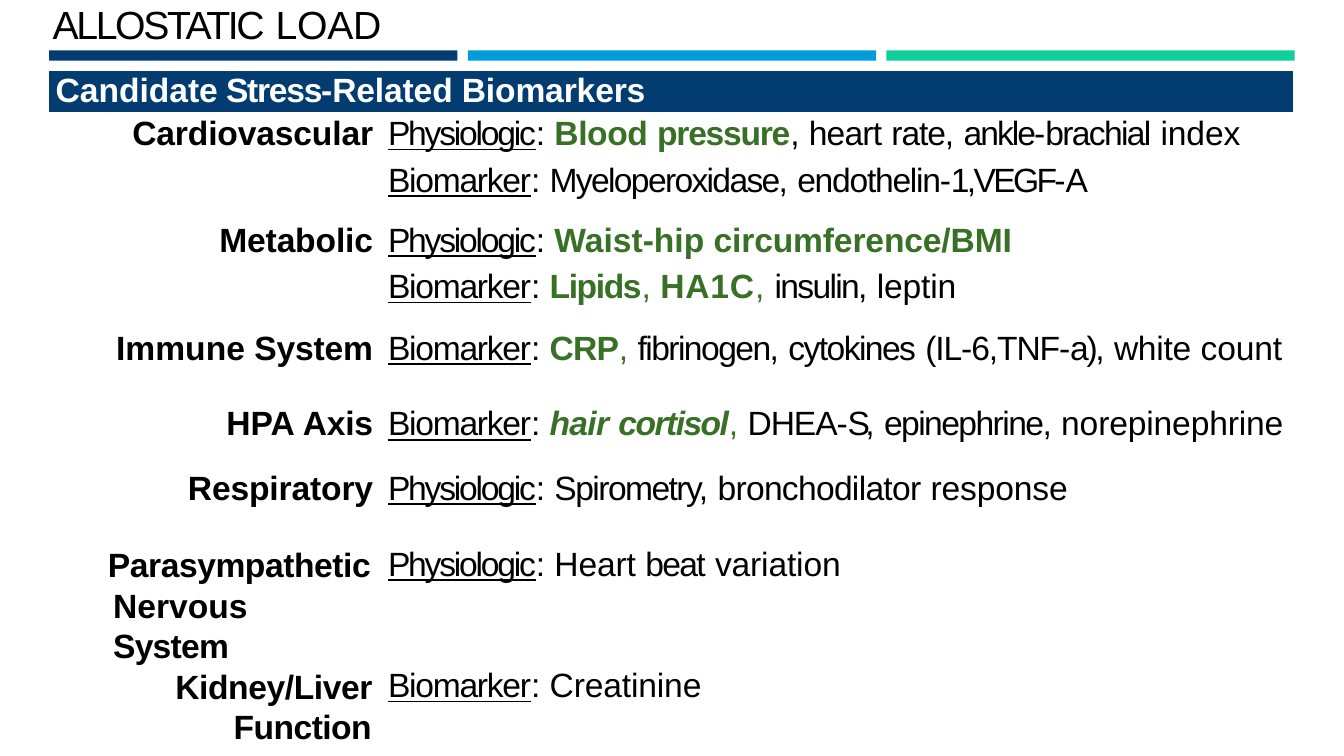
from dataclasses import dataclass

from lxml.etree import SubElement
from pptx import Presentation
from pptx.dml.color import RGBColor as Rgb
from pptx.enum.shapes import MSO_SHAPE as Shape
from pptx.enum.text import PP_ALIGN as Align
from pptx.oxml.ns import qn
from pptx.util import Cm, Pt


@dataclass(frozen=True)
class Theme:
    """Colours, font and type sizes of the slide."""
    navy: str = "033C71"
    blue: str = "009DD9"
    mint: str = "10CF9B"
    green: str = "387026"
    black: str = "000000"
    white: str = "FFFFFF"
    font: str = "Arial"
    title_size: float = 28
    body_size: float = 24


THEME = Theme()

PHYSIOLOGIC = [("Physiologic", -1.6, "u"), (": ", -1.6, "")]
BIOMARKER = [("Biomarker", -0.9, "u"), (": ", -0.9, "")]

TITLE = [("ALLOSTATIC ", -1.7, ""), ("LOAD", -0.2, "")]
HEADING = [("Candidate", 0, "bw"), (" Stress-", -0.9, "bw"), ("Related Biomarkers", -0.1, "bw")]

SYSTEMS = [
    ([("Cardiovascular", -0.1, "b")],
     [PHYSIOLOGIC + [("Blood ", -0.3, "bg"), ("pressure", -0.9, "bg"), (", ", -0.9, ""),
                     ("heart ", -0.6, ""), ("rate, ", -0.8, ""), ("ankle-", -1.4, ""),
                     ("brachial ", -1.2, ""), ("index", -0.1, "")],
      BIOMARKER + [("Myeloperoxidase, ", -1.2, ""), ("endothelin-", -0.9, ""),
                   ("1,VEGF-", -1.9, ""), ("A", -0.5, "")]]),
    ([("Metabolic", -0.1, "b")],
     [PHYSIOLOGIC + [("Waist-hip ", 0, "bg"), ("circumference/BMI", -0.1, "bg")],
      BIOMARKER + [("Lipids", -1, "bg"), (", ", -1, "g"), ("HA1C", 0.6, "bg"), (", ", 0.6, "g"),
                   ("insulin, ", -1.2, ""), ("leptin", -0.1, "")]]),
    ([("Immune ", 0, "b"), ("System", -0.1, "b")],
     [BIOMARKER + [("CRP", -0.6, "bg"), (", ", -0.6, "g"), ("fibrinogen, ", -1.1, ""),
                   ("cytokines ", -1.1, ""), ("(IL-6,TNF-", -0.8, ""), ("a), ", -1.7, ""),
                   ("white ", -0.2, ""), ("count", -0.1, "")]]),
    ([("HPA ", 0, "b"), ("Axis", -0.2, "b")],
     [BIOMARKER + [("hair ", -0.5, "big"), ("cortisol", -1.1, "big"), (", ", -1.1, "g"),
                   ("DHEA-", -0.8, ""), ("S, ", -3.4, ""), ("epinephrine, ", -1.1, ""),
                   ("norepinephrine", -0.1, "")]]),
    ([("Respiratory", -0.1, "b")],
     [PHYSIOLOGIC + [("Spirometry, ", -1.1, ""), ("bronchodilator ", -0.5, ""),
                     ("response", -0.1, "")]]),
    ([("Parasympathetic ", -0.3, "b"), ("Nervous ", 0, "b"), ("System", -0.5, "b")],
     [PHYSIOLOGIC + [("Heart ", -0.1, ""), ("beat ", -1.2, ""), ("variation", -0.1, "")]]),
    ([("Kidney/Liver ", -0.3, "b"), ("Function", -0.4, "b")],
     [BIOMARKER + [("Creatinine", -0.1, "")]]),
]

COLUMN_WIDTHS = [8.36, 23.01]
ROW_HEIGHTS = [1.09, 2.69, 2.72, 1.9, 1.63, 1.9, 2.41, 2.62]
LINE = 27.9
HANGING_LABELS = {5: (1.63, -0.13, 0.23, 29), 6: (4.67, -1.47, 0, 28.8)}


def write_runs(paragraph, runs, size):
    """Add styled runs (b bold, i italic, u underline, g green, w white), end spaces untracked."""
    for text, tracking, style in runs:
        word = text.rstrip()
        for part, spacing in ((word, tracking), (text[len(word):], 0)):
            if not part:
                continue
            run = paragraph.add_run()
            run.text = part
            font = run.font
            font.name, font.size = THEME.font, Pt(size)
            font.bold, font.italic, font.underline = ("b" in style, "i" in style, "u" in style)
            colour = THEME.green if "g" in style else THEME.white if "w" in style else THEME.black
            font.color.rgb = Rgb.from_string(colour)
            run._r.get_or_add_rPr().set("spc", str(round(spacing * 100)))


def indent(paragraph, left, first=0):
    """Set the left margin and first-line indent in centimetres."""
    properties = paragraph._p.get_or_add_pPr()
    properties.set("marL", str(Cm(left)))
    properties.set("indent", str(Cm(first)))


def style_cell(cell, row):
    """Clear the insets, draw white borders and fill the heading row."""
    cell.margin_left = cell.margin_right = cell.margin_top = cell.margin_bottom = 0
    properties = cell._tc.get_or_add_tcPr()
    heavy_side = {0: "lnB", 1: "lnT"}.get(row)
    for side in ("lnL", "lnR", "lnT", "lnB"):
        border = SubElement(properties, qn(f"a:{side}"), w=str(Pt(3 if side == heavy_side else 1)))
        SubElement(SubElement(border, qn("a:solidFill")), qn("a:srgbClr"), val=THEME.white)
    if row == 0:
        cell.fill.solid()
        cell.fill.fore_color.rgb = Rgb.from_string(THEME.navy)
    else:
        cell.fill.background()


def add_title(slide):
    """Place the title and the three bars below it."""
    frame = slide.shapes.add_textbox(Cm(1.3), Cm(0.01), Cm(9), Cm(1.2)).text_frame
    frame.word_wrap = True
    frame.margin_left = frame.margin_right = frame.margin_top = frame.margin_bottom = 0
    indent(frame.paragraphs[0], 0.03)
    write_runs(frame.paragraphs[0], TITLE, THEME.title_size)
    for position, colour in enumerate((THEME.navy, THEME.blue, THEME.mint)):
        bar = slide.shapes.add_shape(
            Shape.RECTANGLE, Cm(1.24 + 10.55 * position), Cm(1.27), Cm(10.29), Cm(0.26))
        bar.shadow.inherit = False
        bar.fill.solid()
        bar.fill.fore_color.rgb = Rgb.from_string(colour)
        bar.line.fill.background()


def add_biomarkers(slide):
    """Place the table of body systems and their measures."""
    table = slide.shapes.add_table(
        len(ROW_HEIGHTS), len(COLUMN_WIDTHS), Cm(1.22), Cm(1.78),
        Cm(sum(COLUMN_WIDTHS)), Cm(sum(ROW_HEIGHTS))).table
    table.first_row = table.horz_banding = False
    for column, width in zip(table.columns, COLUMN_WIDTHS):
        column.width = Cm(width)
    for row, height in enumerate(ROW_HEIGHTS):
        table.rows[row].height = Cm(height)
        for column in range(len(COLUMN_WIDTHS)):
            style_cell(table.cell(row, column), row)

    table.cell(0, 0).merge(table.cell(0, 1))
    heading = table.cell(0, 0).text_frame.paragraphs[0]
    indent(heading, 0.18)
    heading.line_spacing = Pt(LINE)
    write_runs(heading, HEADING, THEME.body_size)

    for index, (label_runs, measures) in enumerate(SYSTEMS):
        label_cell, measure_cell = table.rows[index + 1].cells
        label = label_cell.text_frame.paragraphs[0]
        if index in HANGING_LABELS:
            left, first, right, spacing = HANGING_LABELS[index]
            indent(label, left, first)
        else:
            right, spacing = 0.18, LINE
            label.alignment = Align.RIGHT
        label_cell.margin_right = Cm(right)
        label.line_spacing = Pt(spacing)
        write_runs(label, label_runs, THEME.body_size)

        frame = measure_cell.text_frame
        for order, runs in enumerate(measures):
            measure = frame.add_paragraph() if order else frame.paragraphs[0]
            indent(measure, 0.2)
            if order:
                measure.space_before = Pt(6.2)
            else:
                measure.line_spacing = Pt(LINE)
            write_runs(measure, runs, THEME.body_size)


def main():
    """Build the slide and save it."""
    deck = Presentation()
    deck.slide_width, deck.slide_height = Cm(33.87), Cm(19.05)
    slide = deck.slides.add_slide(deck.slide_layouts[6])
    add_title(slide)
    add_biomarkers(slide)
    deck.save("out.pptx")


if __name__ == "__main__":
    main()
